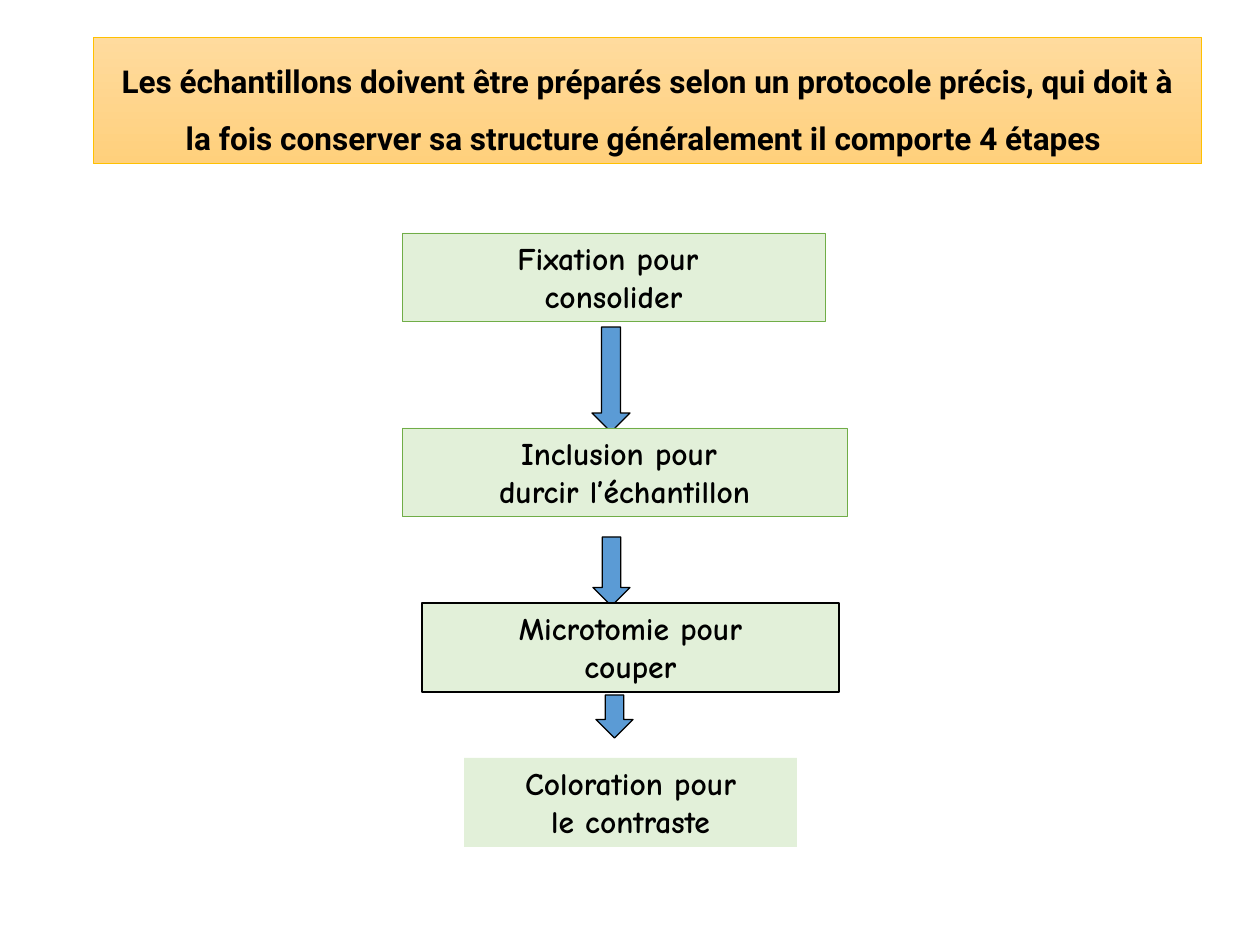
from dataclasses import dataclass

from pptx import Presentation
from pptx.dml.color import RGBColor
from pptx.enum.shapes import MSO_SHAPE as Shape
from pptx.enum.text import MSO_ANCHOR as Anchor, MSO_AUTO_SIZE as AutoSize, PP_ALIGN as Align
from pptx.util import Emu, Pt

PX_PER_INCH = 126
STEP_HEIGHT = 89


@dataclass(frozen=True)
class Theme:
    step_fill: str = "E2F0D9"
    step_line: str = "70AD47"
    arrow_fill: str = "5B9BD5"
    title_top: str = "FFDB9E"
    title_bottom: str = "FFD07C"
    title_line: str = "FFC000"
    ink: str = "000000"
    title_font: str = "Roboto"
    step_font: str = "Comic Neue"
    text_size: int = 18


THEME = Theme()

TITLE = ("Les échantillons doivent être préparés selon un protocole précis, qui doit à "
         "la fois conserver sa structure généralement il comporte 4 étapes ")

# lines of text, left, top, width, outline colour, outline weight
STEPS = [
    (("Fixation pour ", "consolider"), 402, 233, 423, THEME.step_line, 0.5),
    (("Inclusion pour ", "durcir l’échantillon"), 402, 428, 445, THEME.step_line, 0.5),
    (("Microtomie pour", "couper"), 422, 603, 417, THEME.ink, 1),
    (("Coloration pour", "le contraste"), 464, 758, 333, None, 0),
]

# left, top, width, height of the arrow that follows each step but the last
ARROWS = [(592, 327, 38, 105), (593, 537, 37, 69), (596, 695, 37, 43)]


def px(length):
    return Emu(round(length * 914400 / PX_PER_INCH))


def rgb(color):
    return RGBColor.from_string(color)


def add_box(slide, kind, left, top, width, height, fill=None, line=None, weight=0.5):
    box = slide.shapes.add_shape(kind, px(left), px(top), px(width), px(height))
    box.shadow.inherit = False
    if fill:
        box.fill.solid()
        box.fill.fore_color.rgb = rgb(fill)
    if line:
        box.line.color.rgb = rgb(line)
        box.line.width = Pt(weight)
    else:
        box.line.fill.background()
    return box


def write(box, lines, font, size=THEME.text_size, color=THEME.ink, spacing=None):
    """Fill the box with one bold, centred paragraph per line."""
    frame = box.text_frame
    frame.word_wrap = True
    frame.auto_size = AutoSize.SHAPE_TO_FIT_TEXT
    frame.vertical_anchor = Anchor.TOP
    for number, text in enumerate(lines):
        paragraph = frame.add_paragraph() if number else frame.paragraphs[0]
        paragraph.alignment = Align.CENTER
        paragraph.line_spacing = spacing
        run = paragraph.add_run()
        run.text = text
        run.font.name = font
        run.font.size = Pt(size)
        run.font.bold = True
        run.font.color.rgb = rgb(color)


def add_title(slide):
    banner = add_box(slide, Shape.RECTANGLE, 93, 37, 1109, 127, line=THEME.title_line)
    banner.fill.gradient()
    banner.fill.gradient_angle = 270
    for stop, color in zip(banner.fill.gradient_stops, (THEME.title_top, THEME.title_bottom)):
        stop.color.rgb = rgb(color)
    write(banner, [TITLE], THEME.title_font, spacing=1.5)


def add_step(slide, lines, left, top, width, line, weight):
    step = add_box(slide, Shape.RECTANGLE, left, top, width, STEP_HEIGHT,
                   THEME.step_fill, line, weight)
    write(step, lines, THEME.step_font)


def add_arrow(slide, left, top, width, height):
    add_box(slide, Shape.DOWN_ARROW, left, top, width, height,
            THEME.arrow_fill, THEME.ink, 0.75)


def main():
    deck = Presentation()
    deck.slide_width, deck.slide_height = px(1260), px(945)
    slide = deck.slides.add_slide(deck.slide_layouts[6])
    for number, step in enumerate(STEPS):
        add_step(slide, *step)
        if number < len(ARROWS):
            add_arrow(slide, *ARROWS[number])
    add_title(slide)
    deck.save("out.pptx")


if __name__ == "__main__":
    main()
